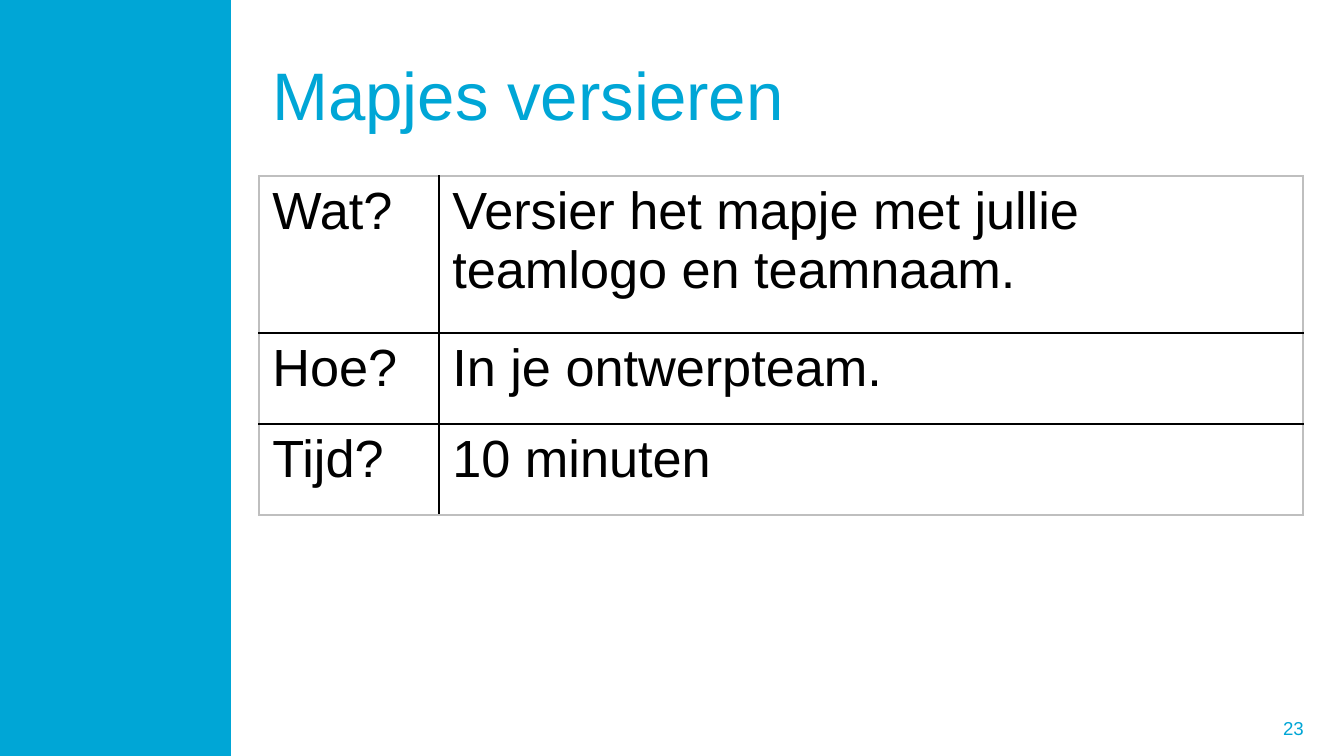
from dataclasses import dataclass

from lxml.etree import SubElement
from pptx import Presentation
from pptx.dml.color import RGBColor
from pptx.enum.shapes import MSO_SHAPE as Shape
from pptx.enum.text import MSO_ANCHOR as Anchor, PP_ALIGN as Align
from pptx.oxml import parse_xml
from pptx.oxml.ns import nsdecls, qn
from pptx.util import Emu, Pt

PX = 914400 / 134.4


def px(count):
    return Emu(round(count * PX))


@dataclass(frozen=True)
class Theme:
    font: str = "Arial"
    accent: str = "00A6D6"
    ink: str = "000000"
    frame: str = "BFBFBF"
    title_size: int = 36
    table_size: int = 28
    number_size: int = 10
    rule_width: int = 1


class SlideBuilder:
    def __init__(self, page, theme):
        self.page = page
        self.theme = theme

    def style(self, para, size, color):
        for span in para.runs:
            span.font.name = self.theme.font
            span.font.size = Pt(size)
            span.font.color.rgb = RGBColor.from_string(color)

    def band(self, left, top, width, height):
        band = self.page.shapes.add_shape(Shape.RECTANGLE, *map(px, (left, top, width, height)))
        band.shadow.inherit = False
        band.fill.solid()
        band.fill.fore_color.rgb = RGBColor.from_string(self.theme.accent)
        band.line.fill.background()

    def text(self, words, left, top, width, height, size, align=Align.LEFT):
        box = self.page.shapes.add_textbox(*map(px, (left, top, width, height)))
        frame = box.text_frame
        frame.word_wrap = True
        frame.vertical_anchor = Anchor.MIDDLE
        frame.text = words
        para = frame.paragraphs[0]
        para.alignment = align
        self.style(para, size, self.theme.accent)

    def borders(self, cell, colors):
        """Draw the left, right, top and bottom cell rules in the given colours."""
        properties = cell._tc.get_or_add_tcPr()
        for index, (side, color) in enumerate(zip("LRTB", colors)):
            width = Pt(self.theme.rule_width)
            line = parse_xml(f'<a:ln{side} {nsdecls("a")} w="{width}"/>')
            fill = SubElement(line, qn("a:solidFill"))
            SubElement(fill, qn("a:srgbClr"), val=color)
            properties.insert(index, line)

    def table(self, rows, left, top, widths, heights):
        """Add a plain table with dark inner rules and a light outer frame."""
        shape = self.page.shapes.add_table(
            len(rows), len(widths), *map(px, (left, top, sum(widths), sum(heights))))
        table = shape.table
        table.first_row = False
        table.horz_banding = False
        for column, width in zip(table.columns, widths):
            column.width = px(width)
        for row, height in zip(table.rows, heights):
            row.height = px(height)

        ink, frame = self.theme.ink, self.theme.frame
        last_row, last_column = len(rows) - 1, len(widths) - 1
        for r, row in enumerate(rows):
            for c, words in enumerate(row):
                cell = table.cell(r, c)
                cell.fill.background()
                cell.text = words
                self.style(cell.text_frame.paragraphs[0], self.theme.table_size, ink)
                outer = (c == 0, c == last_column, r == 0, r == last_row)
                self.borders(cell, [frame if edge else ink for edge in outer])


def main():
    deck = Presentation()
    deck.slide_width, deck.slide_height = px(1344), px(756)
    theme = Theme()
    slide = SlideBuilder(deck.slides.add_slide(deck.slide_layouts[6]), theme)

    slide.text("23", 977, 708, 340, 40, theme.number_size, Align.RIGHT)
    slide.band(0, 0, 231, 756)
    slide.text("Mapjes versieren", 259, 31, 1044, 126, theme.title_size)
    slide.table(
        [
            ("Wat?", "Versier het mapje met jullie teamlogo en teamnaam."),
            ("Hoe?", "In je ontwerpteam."),
            ("Tijd?", "10 minuten"),
        ],
        259, 176, widths=(180, 864), heights=(157, 91, 91))

    deck.save("out.pptx")


if __name__ == "__main__":
    main()
